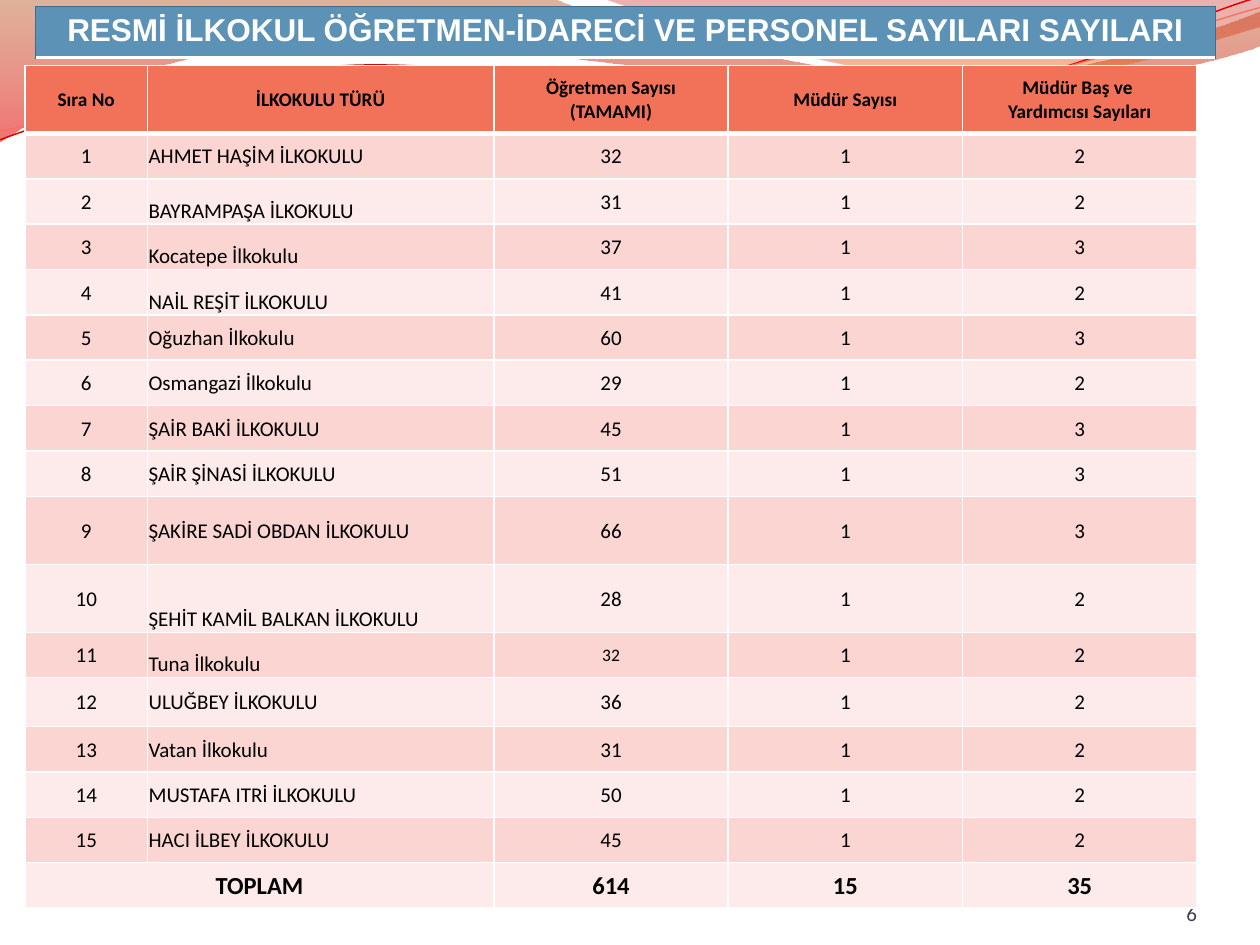
import math

from lxml import etree
from pptx import Presentation
from pptx import util as u
from pptx.dml import color
from pptx.enum import text
from pptx.oxml import ns

TOP, MID, LOW = text.MSO_ANCHOR.TOP, text.MSO_ANCHOR.MIDDLE, text.MSO_ANCHOR.BOTTOM
MARGINS = dict(left=0.01, top=0.01, right=0.01, bottom=0)
WHITE = ("FFFFFF", 1)
HEADS = ["Sıra No", "İLKOKULU TÜRÜ", "Öğretmen Sayısı\v(TAMAMI)", "Müdür Sayısı",
         "Müdür Baş ve \vYardımcısı Sayıları"]
SCHOOLS = [
    ("AHMET HAŞİM İLKOKULU", 32, 2), ("BAYRAMPAŞA İLKOKULU", 31, 2),
    ("Kocatepe İlkokulu", 37, 3), ("NAİL REŞİT İLKOKULU", 41, 2),
    ("Oğuzhan İlkokulu", 60, 3), ("Osmangazi İlkokulu", 29, 2),
    ("ŞAİR BAKİ İLKOKULU", 45, 3), ("ŞAİR ŞİNASİ İLKOKULU", 51, 3),
    ("ŞAKİRE SADİ OBDAN İLKOKULU", 66, 3), ("ŞEHİT KAMİL BALKAN İLKOKULU", 28, 2),
    ("Tuna İlkokulu", 32, 2), ("ULUĞBEY İLKOKULU", 36, 2), ("Vatan İlkokulu", 31, 2),
    ("MUSTAFA ITRİ İLKOKULU", 50, 2), ("HACI İLBEY İLKOKULU", 45, 2)]
LOW_ROWS = {2, 3, 4, 10, 11}
TALL = {0: 0.54, 9: 0.54, 10: 0.54, 12: 0.39}
BANDS = [
    ((-0.01, -0.01, 10.02, 1.14),
     [(0, -0.01), (4.4, -0.01), (4.76, 0.17, 6.64, 0.63, 7.58, 0.63),
      (8.53, 0.63, 9.58, 0.26, 10, 0.09), (10.01, 0.36),
      (9.83, 0.44, 8.7, 0.76, 7.46, 0.75), (6.22, 0.75, 3.82, 0.28, 2.57, 0.34),
      (1.29, 0.35, 0.46, 0.83, -0.01, 1.13), (0, -0.01)],
     [(0, "B9561F", 45), (100, "E70000", 55)]),
    ((4.79, -0.01, 5.21, 0.7),
     [(4.79, -0.01), (5.09, 0.11, 6.82, 0.62, 7.69, 0.65),
      (8.56, 0.69, 9.61, 0.32, 10, 0.21), (10, 0), (4.79, -0.01)],
     [(0, "BD0000", 30), (80, "EC6215", 45)])]
LINES = [
    ((-0.02, 0.22, 10.02, 0.71),
     [(0, 1.11), (0.48, 0.93, 1.58, 0.57, 2.77, 0.52),
      (3.95, 0.47, 5.93, 0.89, 7.13, 0.8), (8.33, 0.71, 9.38, 0.15, 9.98, -0.02)],
     "E10000", 0.85),
    ((-0.02, 0.3, 10.03, 0.58),
     [(0, 1.04), (0.47, 0.96, 1.64, 0.61, 2.83, 0.56),
      (4.03, 0.51, 5.97, 0.83, 7.17, 0.75), (8.36, 0.67, 9.41, 0.21, 10, 0.06)],
     "F17259", 0.75)]


def rgb(code):
    """Turn a hex string into a colour."""
    return color.RGBColor.from_string(code)


def node(base, tag, **attrs):
    """Add a drawing element below another."""
    return etree.SubElement(base, ns.qn(tag), {k: str(v) for k, v in attrs.items()})


def local(box, x, y, tilt):
    """Give a slide point in the units of a box tilted about its middle."""
    left, top, wide, high = box
    dx, dy, arc = x - left - wide / 2, y - top - high / 2, math.radians(-tilt)
    return (u.Inches(wide / 2 + dx * math.cos(arc) - dy * math.sin(arc)),
            u.Inches(high / 2 + dx * math.sin(arc) + dy * math.cos(arc)))


def outline(slide, box, steps, close, tilt=0):
    """Draw an unfilled freeform of lines and cubic curves."""
    pen = slide.shapes.build_freeform()
    pen.add_line_segments([(1, 1)], close=False)
    shape = pen.convert_to_shape()
    for key, val in zip(("left", "top", "width", "height"), box):
        setattr(shape, key, u.Inches(val))
    shape.rotation = tilt
    trail = shape._element.spPr.find(".//" + ns.qn("a:path"))
    for kid in list(trail):
        trail.remove(kid)
    trail.set("w", str(shape.width))
    trail.set("h", str(shape.height))
    for i, step in enumerate(steps):
        tag = "a:moveTo" if i == 0 else "a:lnTo" if len(step) == 2 else "a:cubicBezTo"
        part = node(trail, tag)
        for x, y in zip(step[::2], step[1::2]):
            px, py = local(box, x, y, tilt)
            node(part, "a:pt", x=px, y=py)
    if close:
        node(trail, "a:close")
    shape.shadow.inherit = False
    shape.fill.background()
    return shape


def band(slide, box, steps, stops):
    """Draw a wave with a see-through downward gradient."""
    shape = outline(slide, box, steps, True)
    shape.line.fill.background()
    shape.fill.gradient()
    grad = shape._element.spPr.find(ns.qn("a:gradFill"))
    for kid in list(grad):
        grad.remove(kid)
    group = node(grad, "a:gsLst")
    for pos, code, alpha in stops:
        stop = node(group, "a:gs", pos=pos * 1000)
        node(node(stop, "a:srgbClr", val=code), "a:alpha", val=alpha * 1000)
    node(grad, "a:lin", ang=5400000, scaled=0)


def stroke(slide, box, steps, code, width):
    """Draw a tilted curved line."""
    line = outline(slide, box, steps, False, -2.7).line
    line.color.rgb = rgb(code)
    line.width = u.Pt(width)


def style(para, code, align, **form):
    """Format the runs of a paragraph."""
    para.alignment = align
    for run in para.runs:
        for key, val in form.items():
            setattr(run.font, key, val)
        run.font.color.rgb = rgb(code)


def edge(cell, **sides):
    """Set the borders of a cell."""
    props = cell._tc.get_or_add_tcPr()
    for side in "LRTB":
        code, width = sides[side]
        line = node(props, "a:ln" + side, w=int(u.Pt(width)))
        node(node(line, "a:solidFill"), "a:srgbClr", val=code)


def paint(cell, words, back, code="000000", align=text.PP_ALIGN.CENTER, anchor=MID, **form):
    """Fill a cell and write its words."""
    cell.fill.solid()
    cell.fill.fore_color.rgb = rgb(back)
    cell.vertical_anchor = anchor
    if words:
        cell.text_frame.text = words
    style(cell.text_frame.paragraphs[0], code, align, **form)


def grid(slide, box, cols, rows):
    """Add a plain table with the given column and row sizes."""
    frame = slide.shapes.add_table(len(rows), len(cols), *map(u.Inches, box))
    table = frame.table
    table.first_row = table.horz_banding = False
    for col, size in zip(table.columns, cols):
        col.width = u.Inches(size)
    for row, size in zip(table.rows, rows):
        row.height = u.Inches(size)
    return table


def banner(slide, box):
    """Place the heading bar."""
    cell = grid(slide, box, [box[2]], [box[3]]).cell(0, 0)
    rim = ("436C87", 0.75)
    edge(cell, L=rim, R=rim, T=rim, B=("FFFFFF", 2))
    paint(cell, "RESMİ İLKOKUL ÖĞRETMEN-İDARECİ VE PERSONEL SAYILARI SAYILARI",
          "5C92B5", "FFFFFF", anchor=TOP, name="Arial", size=u.Pt(18), bold=True)


def roster(slide, box):
    """Place the table of schools with its totals."""
    body = [(str(i), name, str(staff), "1", str(aides))
            for i, (name, staff, aides) in enumerate(SCHOOLS, 1)]
    sums = [sum(int(row[c]) for row in body) for c in (2, 3, 4)]
    data = [HEADS, *body, ["TOPLAM", "", *map(str, sums)]]
    last = len(data) - 1
    table = grid(slide, box, [0.97, 2.75, 1.86, 1.86, 1.86],
                 [TALL.get(r, 0.36) for r in range(len(data))])
    table.cell(last, 0).merge(table.cell(last, 1))
    for r, row in enumerate(data):
        back = "F17259" if r == 0 else "FAD5D1" if r % 2 else "FCEBEA"
        size = {0: 11, last: 14}.get(r, 12)
        for c, words in enumerate(row):
            cell = table.cell(r, c)
            label = c == 1 and 0 < r < last
            edge(cell, L=WHITE, R=WHITE, T=("FFFFFF", 3) if r == 1 else WHITE,
                 B=("FFFFFF", 3) if r == 0 else WHITE)
            for side, gap in MARGINS.items():
                setattr(cell, "margin_" + side, u.Inches(gap))
            paint(cell, words, back, name="Calibri", bold=r in (0, last),
                  size=u.Pt(10 if (r, c) == (11, 2) else size),
                  align=text.PP_ALIGN.LEFT if label else text.PP_ALIGN.CENTER,
                  anchor=LOW if label and r in LOW_ROWS else MID)


def folio(slide, box):
    """Place the page number."""
    frame = slide.shapes.add_textbox(*map(u.Inches, box)).text_frame
    form = dict(word_wrap=True, vertical_anchor=LOW, margin_left=0, margin_top=0,
                margin_right=0, margin_bottom=0, text="6")
    for key, val in form.items():
        setattr(frame, key, val)
    style(frame.paragraphs[0], "3F4152", text.PP_ALIGN.RIGHT, name="Calibri", size=u.Pt(12))


def main():
    """Build and save the slide."""
    deck = Presentation()
    deck.slide_width, deck.slide_height = u.Inches(10), u.Inches(7.5)
    slide = deck.slides.add_slide(deck.slide_layouts[6])
    for item in BANDS:
        band(slide, *item)
    for item in LINES:
        stroke(slide, *item)
    folio(slide, (8.67, 6.95, 0.83, 0.4))
    roster(slide, (0.2, 0.52, 9.29, 6.69))
    banner(slide, (0.28, 0.05, 9.37, 0.41))
    deck.save("out.pptx")


if __name__ == "__main__":
    main()
